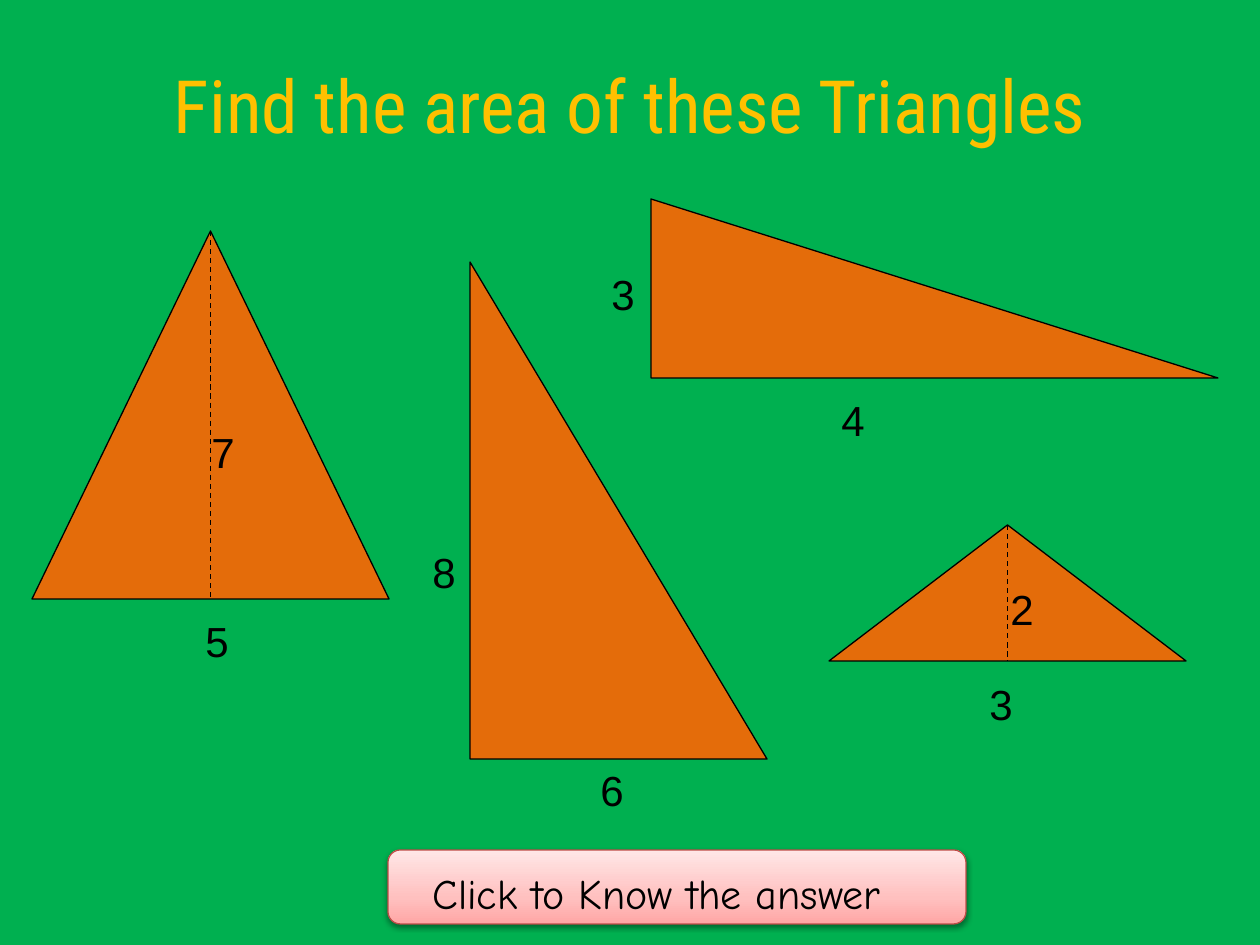
import pptx
import pptx.util
import pptx.oxml
import pptx.oxml.ns
import pptx.dml.color
import pptx.enum.dml
import pptx.enum.shapes
import pptx.enum.text
from dataclasses import dataclass

# Content: outline (left, top, width, height) in px, labels (text, left, top)
TITLE = "Find the area of these Triangles"
BUTTON = "Click to Know the answer"
TRIANGLES = [
    {"right_angled": True, "frame": (651, 199, 567, 179),
     "labels": [("3", 599, 262), ("4", 829, 388)]},
    {"right_angled": True, "frame": (470, 262, 297, 497),
     "labels": [("6", 588, 758), ("8", 420, 540)]},
    {"right_angled": False, "frame": (32, 231, 357, 368),
     "labels": [("5", 193, 609), ("7", 199, 420)]},
    {"right_angled": False, "frame": (829, 525, 357, 136),
     "labels": [("2", 998, 577), ("3", 977, 672)]},
]
PAGE_FRAME = (0, 0, 1260, 945)
TITLE_FRAME = (63, 10, 1134, 189)
BUTTON_FRAME = (388, 850, 578, 74)
BUTTON_TEXT_FRAME = (420, 861, 546, 63)
LABEL_SIZE = (49, 63)


@dataclass(frozen=True)
class Theme:
    board: str = "00B050"
    heading: str = "FFC000"
    triangle: str = "E46C0A"
    ink: str = "000000"
    button_line: str = "BF4C48"
    button_stops: tuple = ((0, "FFA6A5"), (35, "FFC0BF"), (100, "FFE7E7"))
    heading_font: str = "Roboto Condensed"
    label_font: str = "Arial"
    button_font: str = "Comic Neue"
    heading_size: int = 42
    text_size: int = 24
    line_width: float = 0.75


THEME = Theme()
SHAPE = pptx.enum.shapes.MSO_SHAPE
NAMESPACE = pptx.oxml.ns.nsdecls("a")


def emu(*lengths):
    return [round(length * 914400 / 126) for length in lengths]


def rgb(code):
    return pptx.dml.color.RGBColor.from_string(code)


def set_line(shape, color):
    shape.line.color.rgb = rgb(color)
    shape.line.width = pptx.util.Pt(THEME.line_width)


def add_solid(shapes, kind, frame, color):
    shape = shapes.add_shape(kind, *emu(*frame))
    shape.shadow.inherit = False
    shape.fill.solid()
    shape.fill.fore_color.rgb = rgb(color)
    return shape


def write(frame, text, name, size, color):
    span = frame.paragraphs[0].add_run()
    span.text = text
    formats = {"name": name, "size": pptx.util.Pt(size), "bold": False}
    for attribute, value in formats.items():
        setattr(span.font, attribute, value)
    span.font.color.rgb = rgb(color)


def add_text(shapes, frame, text, font, wrap):
    box = shapes.add_textbox(*emu(*frame))
    box.text_frame.word_wrap = wrap
    box.text_frame.auto_size = pptx.enum.text.MSO_AUTO_SIZE.SHAPE_TO_FIT_TEXT
    write(box.text_frame, text, font, THEME.text_size, THEME.ink)


def add_height(shapes, frame):
    left, top, width, height = frame
    middle = left + width / 2
    line = shapes.add_connector(pptx.enum.shapes.MSO_CONNECTOR.STRAIGHT,
                                *emu(middle, top, middle, top + height))
    set_line(line, THEME.ink)
    line.line.dash_style = pptx.enum.dml.MSO_LINE.DASH
    line._element.spPr.append(pptx.oxml.parse_xml(f"<a:effectLst {NAMESPACE}/>"))


def add_triangle(page, right_angled, frame, labels):
    shapes = page.shapes.add_group_shape().shapes
    kind = SHAPE.RIGHT_TRIANGLE if right_angled else SHAPE.ISOSCELES_TRIANGLE
    set_line(add_solid(shapes, kind, frame, THEME.triangle), THEME.ink)
    for text, left, top in labels:
        add_text(shapes, (left, top, *LABEL_SIZE), text, THEME.label_font, False)
    if not right_angled:
        add_height(shapes, frame)


def add_button(page):
    shapes = page.shapes.add_group_shape().shapes
    button = add_solid(shapes, SHAPE.ROUNDED_RECTANGLE, BUTTON_FRAME, THEME.button_stops[0][1])
    set_line(button, THEME.button_line)

    # Three-stop gradient, running upwards
    stops = "".join(f'<a:gs pos="{share * 1000}"><a:srgbClr val="{color}"/></a:gs>'
                    for share, color in THEME.button_stops)
    gradient = pptx.oxml.parse_xml(
        f'<a:gradFill {NAMESPACE} rotWithShape="1"><a:gsLst>{stops}</a:gsLst>'
        '<a:lin ang="16200000" scaled="1"/></a:gradFill>')
    properties = button._element.spPr
    properties.replace(properties.find(pptx.oxml.ns.qn("a:solidFill")), gradient)

    # Soft shadow below
    blur, distance = pptx.util.Pt(3.1), pptx.util.Pt(1.6)
    properties.find(pptx.oxml.ns.qn("a:effectLst")).append(pptx.oxml.parse_xml(
        f'<a:outerShdw {NAMESPACE} blurRad="{blur}" dist="{distance}" dir="5400000" '
        f'rotWithShape="0"><a:srgbClr val="{THEME.ink}"><a:alpha val="38000"/>'
        '</a:srgbClr></a:outerShdw>'))
    add_text(shapes, BUTTON_TEXT_FRAME, BUTTON, THEME.button_font, True)


def main():
    deck = pptx.Presentation()
    deck.slide_width, deck.slide_height = emu(*PAGE_FRAME[2:])
    page = deck.slides.add_slide(deck.slide_layouts[5])

    # Green board, behind the title
    board = add_solid(page.shapes, SHAPE.RECTANGLE, PAGE_FRAME, THEME.board)
    board.line.fill.background()
    title = page.shapes.title
    title._element.addprevious(board._element)

    # Title
    title.left, title.top, title.width, title.height = emu(*TITLE_FRAME)
    title.text_frame.vertical_anchor = pptx.enum.text.MSO_ANCHOR.MIDDLE
    title.text_frame.paragraphs[0].alignment = pptx.enum.text.PP_ALIGN.CENTER
    write(title.text_frame, TITLE, THEME.heading_font, THEME.heading_size, THEME.heading)

    # Triangles and button
    for triangle in TRIANGLES:
        add_triangle(page, **triangle)
    add_button(page)
    deck.save("out.pptx")


if __name__ == "__main__":
    main()
